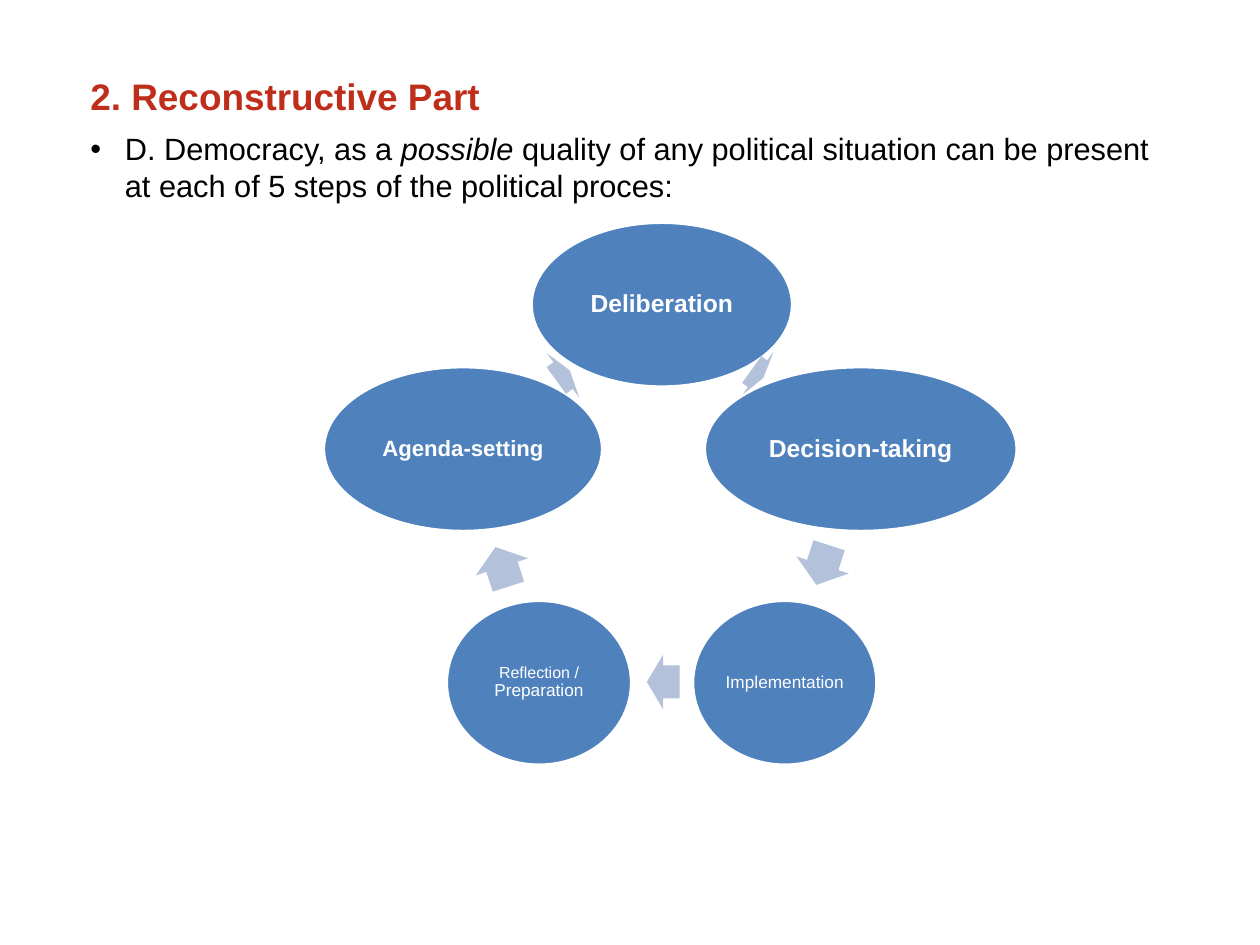
"""Build a slide showing the five steps of the political process as a cycle."""
from math import cos, radians, sin

from lxml.etree import SubElement
from pptx import Presentation
from pptx.dml.color import RGBColor
from pptx.enum.shapes import MSO_SHAPE
from pptx.enum.text import MSO_ANCHOR, PP_ALIGN
from pptx.oxml.ns import qn
from pptx.util import Inches, Pt

RED = RGBColor(0xBE, 0x2E, 0x1A)
BLACK = RGBColor(0, 0, 0)
WHITE = RGBColor(255, 255, 255)
BLUE = RGBColor(0x4F, 0x81, 0xBD)
PALE = RGBColor(0xB3, 0xC1, 0xDB)


def set_frame(frame, inset, anchor):
    values = {"word_wrap": True, "vertical_anchor": anchor}
    for side in ("left", "right", "top", "bottom"):
        values[f"margin_{side}"] = Inches(inset)
    for name, value in values.items():
        setattr(frame, name, value)
    return frame.paragraphs[0]


def add_run(para, text, size, color, bold=False, italic=False):
    run = para.add_run()
    run.text = text
    run.font.color.rgb = color
    values = {"name": "Arial", "size": Pt(size), "bold": bold, "italic": italic}
    for name, value in values.items():
        setattr(run.font, name, value)


deck = Presentation()
deck.slide_width, deck.slide_height = Inches(14.22), Inches(10.67)
slide = deck.slides.add_slide(deck.slide_layouts[6])
shapes = slide.shapes

title = shapes.add_textbox(Inches(0.98), Inches(0.79), Inches(12.2), Inches(0.62))
para = set_frame(title.text_frame, 0.04, MSO_ANCHOR.TOP)
add_run(para, "2. Reconstructive Part", 30, RED, bold=True)

body = shapes.add_textbox(Inches(0.98), Inches(1.43), Inches(12.2), Inches(1.07))
para = set_frame(body.text_frame, 0.04, MSO_ANCHOR.TOP)
props = para._p.get_or_add_pPr()
props.set("marL", str(Inches(0.39)))
props.set("indent", str(Inches(-0.39)))
SubElement(props, qn("a:buFont")).set("typeface", "Arial")
SubElement(props, qn("a:buChar")).set("char", "•")
add_run(para, "D. Democracy, as a ", 25, BLACK)
add_run(para, "possible ", 25, BLACK, italic=True)
add_run(para, "quality of any political situation can be present "
        "at each of 5 steps of the political proces:", 25, BLACK)

MID_X, MID_Y, RADIUS = 7.47, 5.8, 2.36
TALL, HEAD = 1.85, 0.62
STEPS = [
    (2.94, [("Deliberation", 20)], True, (8.47, 3.91, 0.16)),
    (3.52, [("Decision-taking", 20)], True, (9.05, 6.07, 0.47)),
    (2.07, [("Implementation", 14)], False, (7.3, 7.39, 0.37)),
    (2.08, [("Reflection / ", 13), ("Preparation", 14)], False, (5.43, 6.09, 0.47)),
    (3.14, [("Agenda-setting", 18)], True, (6.26, 3.93, 0.19)),
]

for index, (wide, words, bold, (left, top, length)) in enumerate(STEPS):
    angle = radians(72 * index)
    x = MID_X + RADIUS * sin(angle) - wide / 2
    y = MID_Y - RADIUS * cos(angle) - TALL / 2
    step = shapes.add_shape(MSO_SHAPE.OVAL, Inches(x), Inches(y), Inches(wide), Inches(TALL))
    step.shadow.inherit = False
    step.fill.solid()
    step.fill.fore_color.rgb = BLUE
    step.line.color.rgb = WHITE
    step.line.width = Pt(2)
    para = set_frame(step.text_frame, 0.03 if bold else 0.02, MSO_ANCHOR.MIDDLE)
    para.alignment = PP_ALIGN.CENTER
    para.line_spacing = 0.9
    for text, size in words:
        add_run(para, text, size, WHITE, bold)

    arrow = shapes.add_shape(MSO_SHAPE.RIGHT_ARROW, Inches(left), Inches(top),
                             Inches(length), Inches(HEAD))
    arrow.shadow.inherit = False
    arrow.fill.solid()
    arrow.fill.fore_color.rgb = PALE
    arrow.line.fill.background()
    arrow.adjustments[0], arrow.adjustments[1] = 0.6, 0.5
    arrow.rotation = 36 + 72 * index

deck.save("out.pptx")
